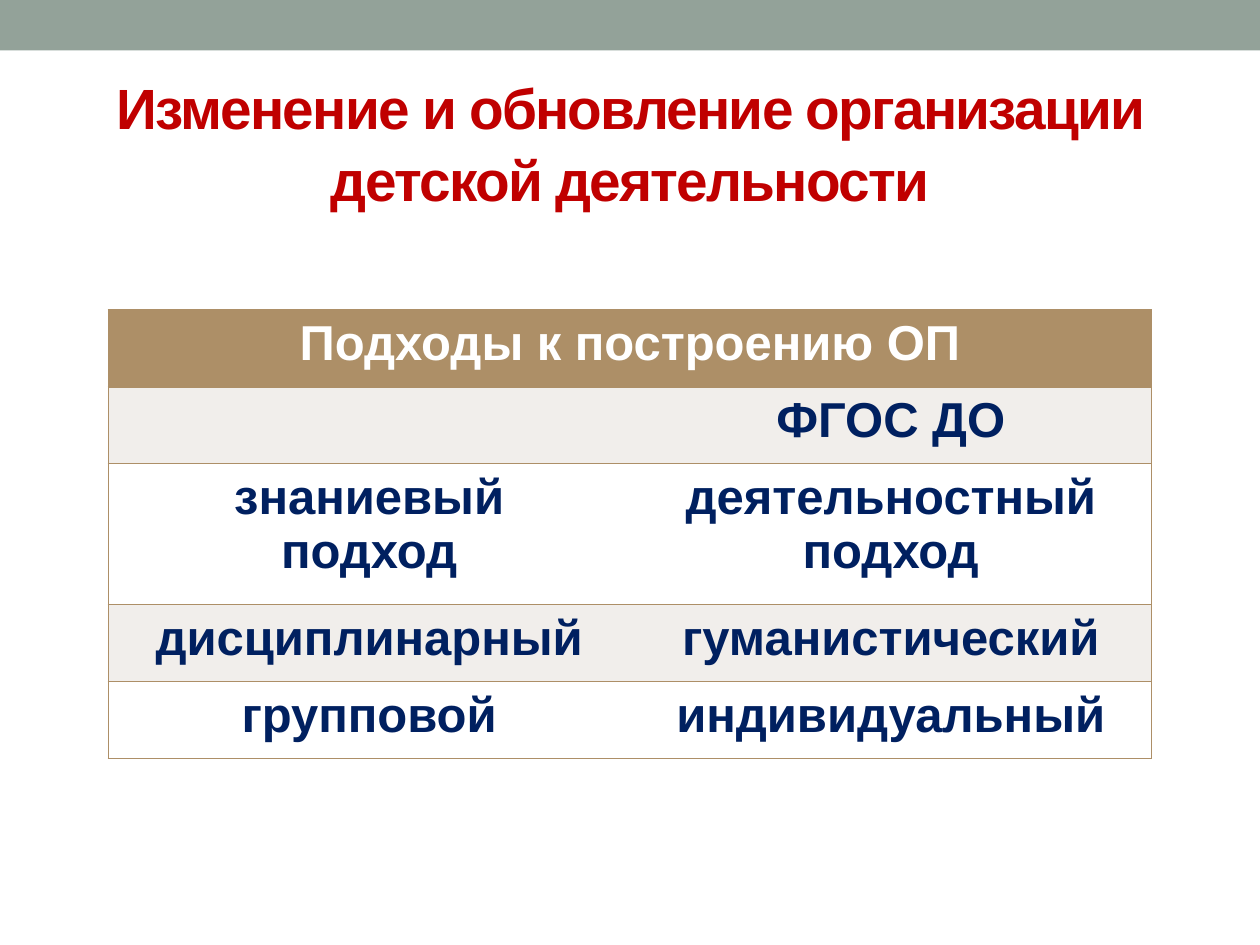
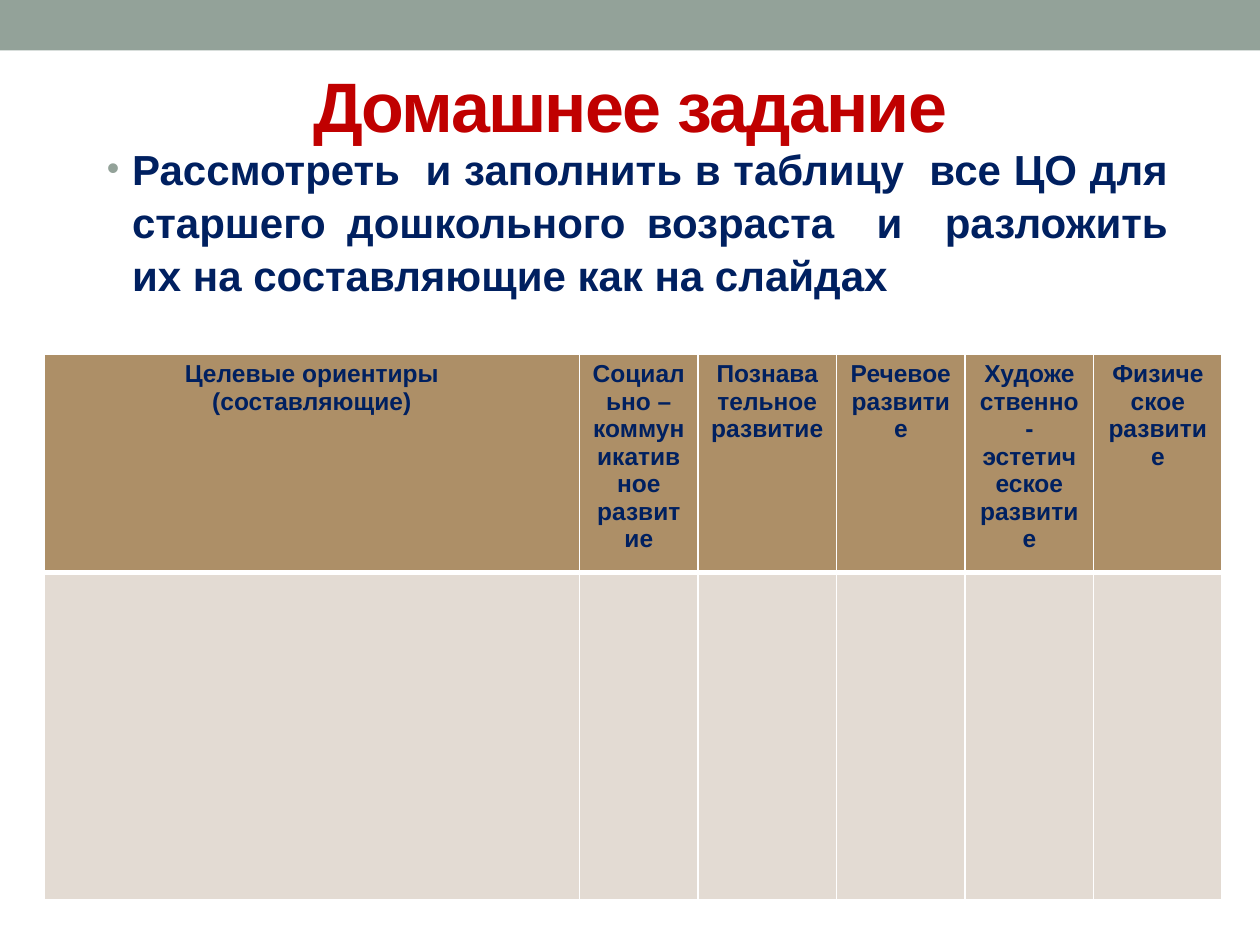
from pptx import Presentation
from pptx import oxml
from pptx.dml.color import RGBColor
from pptx.enum import shapes, text
from pptx.oxml import ns
from pptx.util import Inches, Pt

FONT = "Arial"
SAGE, RED, NAVY, TAN, WHITE = "93A299", "C00000", "002060", "AD8F67", "FFFFFF"
PALE_TAN, SAND = "F1EEEB", "E3DBD3"
CENTER, JUSTIFY = text.PP_ALIGN.CENTER, text.PP_ALIGN.JUSTIFY


def color(hex_value):
    """Turn a hex string into a colour."""
    return RGBColor.from_string(hex_value)


def place(item, left, top, width, height):
    """Set position and size in inches."""
    item.left, item.top = Inches(left), Inches(top)
    item.width, item.height = Inches(width), Inches(height)


def write(frame, content, size, ink, align=CENTER, spacing=None, tracking=None, bullet=None):
    """Fill a text frame with bold text, one paragraph per line."""
    frame.word_wrap = True
    for index, line in enumerate(content.split("\n")):
        paragraph = frame.paragraphs[0] if index == 0 else frame.add_paragraph()
        paragraph.alignment = align
        if spacing:
            paragraph.line_spacing = spacing
        if bullet:
            add_bullet(paragraph, bullet)
        run = paragraph.add_run()
        run.text = line
        font = run.font
        font.name, font.size, font.bold = FONT, Pt(size), True
        font.color.rgb = color(ink)
        if tracking:
            font._element.set("spc", str(int(tracking * 100)))


def add_bullet(paragraph, bullet_color):
    """Give a paragraph a hanging round bullet."""
    properties = paragraph._p.get_or_add_pPr()
    properties.set("marL", str(Inches(0.2)))
    properties.set("indent", str(-Inches(0.2)))
    for markup in (
        f'<a:buClr {ns.nsdecls("a")}><a:srgbClr val="{bullet_color}"/></a:buClr>',
        f'<a:buSzPct {ns.nsdecls("a")} val="85000"/>',
        f'<a:buFont {ns.nsdecls("a")} typeface="{FONT}"/>',
        f'<a:buChar {ns.nsdecls("a")} char="•"/>',
    ):
        properties.append(oxml.parse_xml(markup))


def add_titled_slide(deck, title, box, size):
    """Add a slide with the top band and a red title."""
    slide = deck.slides.add_slide(deck.slide_layouts[5])
    band = slide.shapes.add_shape(shapes.MSO_SHAPE.RECTANGLE, 0, 0, deck.slide_width, Inches(0.4))
    band.shadow.inherit = False
    band.fill.solid()
    band.fill.fore_color.rgb = color(SAGE)
    band.line.fill.background()
    heading = slide.shapes.title
    place(heading, *box)
    heading.text_frame.vertical_anchor = text.MSO_ANCHOR.MIDDLE
    write(heading.text_frame, title, size, RED, spacing=1.05, tracking=-1)
    return slide


def set_borders(cell, line_color, **widths):
    """Draw cell borders by side (L, R, T, B); zero width hides a side."""
    for side in "LRTB":
        width = widths.get(side, 1)
        fill = f'<a:solidFill><a:srgbClr val="{line_color}"/></a:solidFill>' if width else "<a:noFill/>"
        cell._tc.get_or_add_tcPr().append(oxml.parse_xml(
            f'<a:ln{side} {ns.nsdecls("a")} w="{Pt(width)}">{fill}</a:ln{side}>'))


def add_grid(slide, origin, columns, heights, rows, fills, size, inks, line_color, borders):
    """Add a table; borders(row, column) gives the widths that differ from 1 pt."""
    frame = slide.shapes.add_table(
        len(heights), len(columns), *map(Inches, (*origin, sum(columns), sum(heights))))
    table = frame.table
    table.first_row = table.horz_banding = False
    for column, width in zip(table.columns, columns):
        column.width = Inches(width)
    for r, height in enumerate(heights):
        table.rows[r].height = Inches(height)
        for c, content in enumerate(rows[r]):
            cell = table.cell(r, c)
            set_borders(cell, line_color, **borders(r, c))
            cell.fill.solid()
            cell.fill.fore_color.rgb = color(fills[r])
            if content:
                write(cell.text_frame, content, size, inks[r])
    return table


def add_approaches(deck):
    """Build the slide comparing approaches to the programme."""
    slide = add_titled_slide(
        deck, "Изменение и обновление организации детской деятельности", (0.5, 0.58, 9, 1.08), 32.4)
    rows = [
        ("Подходы к построению ОП", ""),
        ("", "ФГОС ДО"),
        ("знаниевый\nподход", "деятельностный подход"),
        ("дисциплинарный", "гуманистический"),
        ("групповой", "индивидуальный"),
    ]
    approaches = add_grid(
        slide, (0.86, 2.46), [4.14] * 2, [0.61, 0.61, 1.12, 0.61, 0.61], rows,
        [TAN, PALE_TAN, WHITE, PALE_TAN, WHITE], 28, [WHITE] + [NAVY] * 4, TAN,
        lambda r, c: {} if r == 0 else {"L" if c else "R": 0})
    approaches.cell(0, 0).merge(approaches.cell(0, 1))


def add_homework(deck):
    """Build the homework slide with its table to fill in."""
    slide = add_titled_slide(deck, "Домашнее задание", (0.69, 0.4, 8.62, 0.83), 40)
    task = slide.shapes.add_textbox(*map(Inches, (0.75, 1.07, 8.62, 1.4)))
    write(task.text_frame,
          "Рассмотреть  и заполнить в таблицу  все ЦО для старшего дошкольного возраста  и  "
          "разложить их на составляющие как на слайдах",
          24, NAVY, align=JUSTIFY, spacing=1.05, bullet=SAGE)
    areas = (
        "Целевые ориентиры\n(составляющие)",
        "Социально –коммуникативное развитие",
        "Познавательное развитие",
        "Речевое развитие",
        "Художественно-эстетическое развитие",
        "Физическое развитие",
    )
    add_grid(
        slide, (0.35, 2.81), [4.25, 0.94, 1.1] + [1.02] * 3, [1.62, 2.6],
        [areas, [""] * len(areas)], [TAN, SAND], 14, [NAVY] * 2, WHITE,
        lambda r, c: {"T": 3} if r else {"B": 3})


def main():
    """Build and save the presentation."""
    deck = Presentation()
    deck.slide_width, deck.slide_height = Inches(10), Inches(7.5)
    add_approaches(deck)
    add_homework(deck)
    deck.save("out.pptx")


if __name__ == "__main__":
    main()
